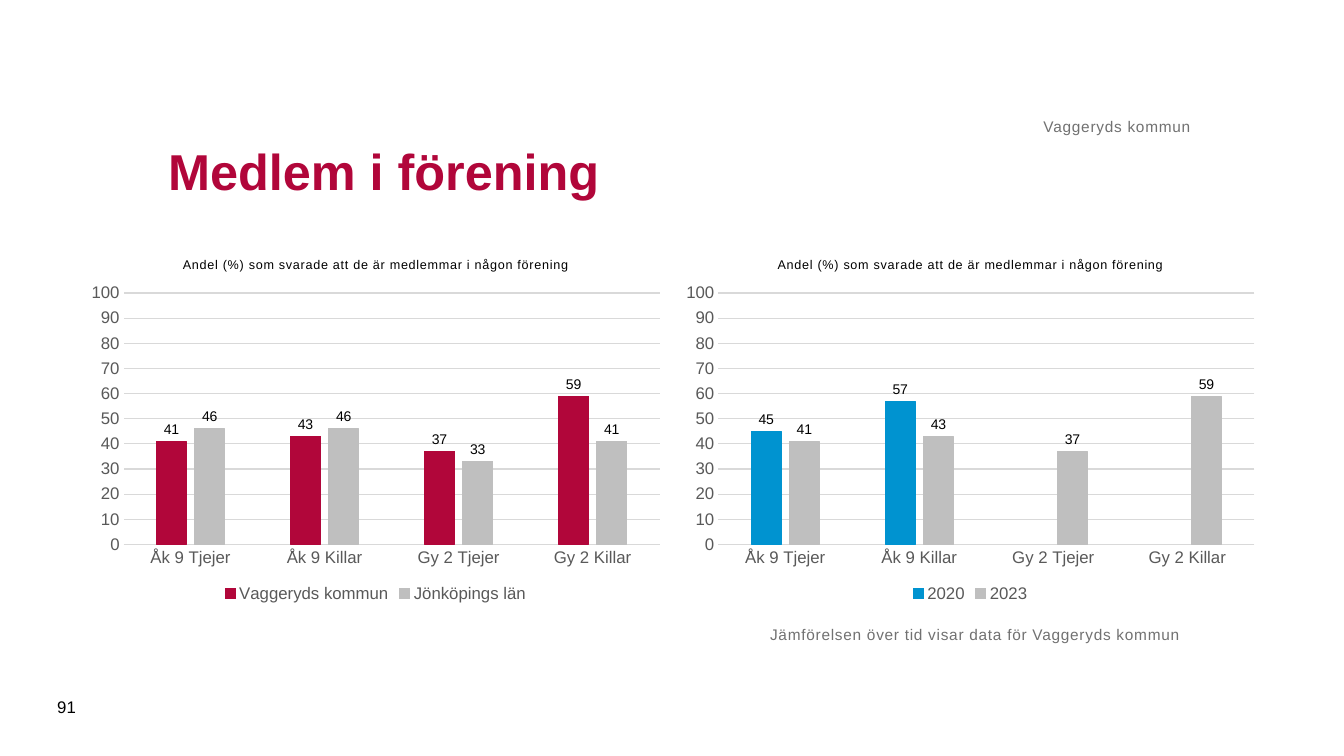
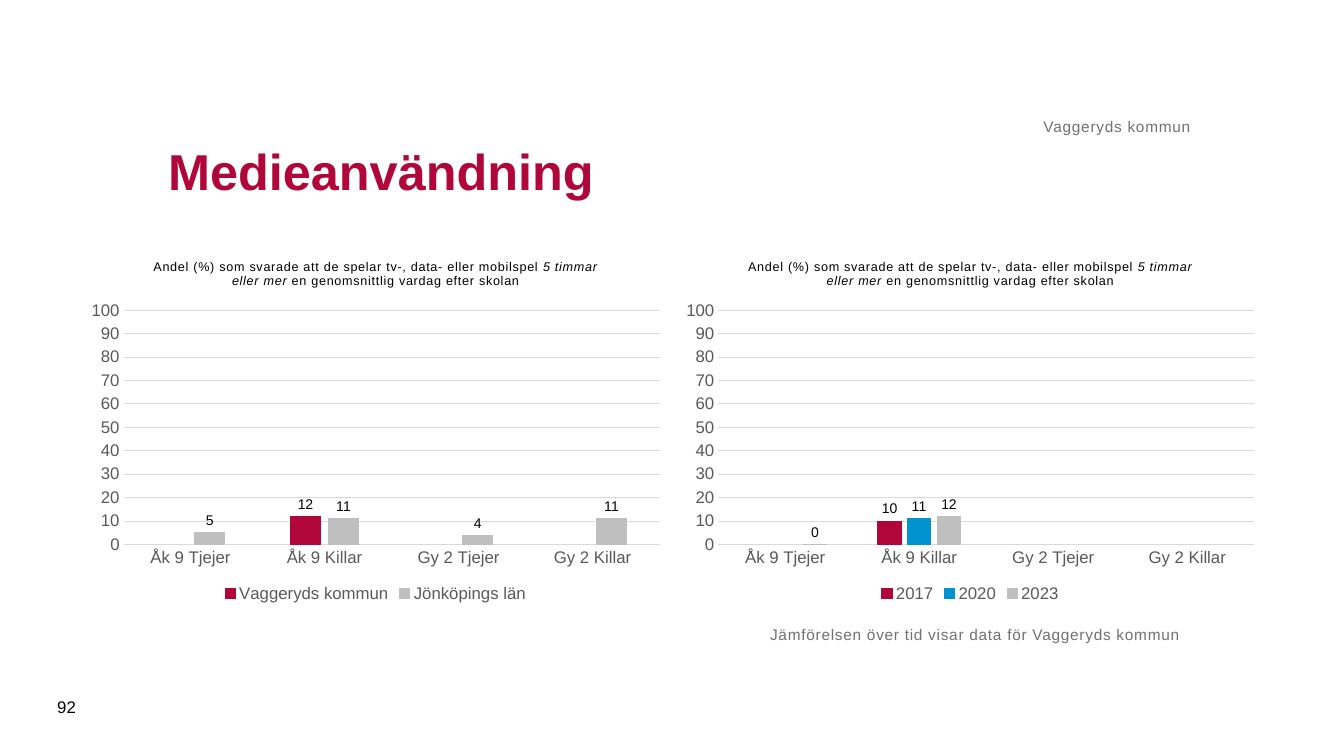
from pptx import Presentation
from pptx.chart.data import CategoryChartData
from pptx.dml.color import RGBColor
from pptx.enum.chart import XL_CHART_TYPE, XL_LABEL_POSITION, XL_LEGEND_POSITION, XL_TICK_MARK
from pptx.enum.text import MSO_ANCHOR, PP_ALIGN
from pptx.util import Inches, Pt

# Shared style
FONT = "Arial"
RED, BLUE, SILVER = "B1063A", "0093D0", "BFBFBF"
BLACK, AXIS_TEXT, NOTE_TEXT, GRID_LINE = "000000", "595959", "717171", "D9D9D9"
NUMBER_FORMAT = "#,##0;#,##0"
LETTER_SPACING = 0.5

# Places in percent of the slide: left, top, width, height
TITLE_PLACE = (11.78, 13.07, 76.8, 18.93)
MUNICIPALITY_PLACE = (11.78, 8.27, 76.8, 9.73)
NOTE_PLACE = (57.3, 82.67, 39.83, 12.53)
NUMBER_PLACE = (3.52, 90.8, 4.28, 5.33)
CHART_LEFT, CHART_STEP = 5.93, 44.25
CHART_TOP, CHART_WIDTH, CHART_HEIGHT = 32, 44.03, 48.27

# Shared wording
MUNICIPALITY = "Vaggeryds kommun"
COUNTY = "Jönköpings län"
NOTE = "Jämförelsen över tid visar data för Vaggeryds kommun"
CATEGORIES = ["Åk 9 Tjejer", "Åk 9 Killar", "Gy 2 Tjejer", "Gy 2 Killar"]


def color(hex_string):
    return RGBColor.from_string(hex_string)


class Report:
    """Holds the presentation, the current slide and the style."""

    def __init__(self):
        self.presentation = Presentation()
        self.presentation.slide_width = Inches(13.33)
        self.presentation.slide_height = Inches(7.5)
        self.slide = None

    def new_slide(self):
        self.slide = self.presentation.slides.add_slide(self.presentation.slide_layouts[6])

    def place(self, left, top, width, height):
        column = self.presentation.slide_width / 100
        row = self.presentation.slide_height / 100
        return (round(left * column), round(top * row),
                round(width * column), round(height * row))

    def style_font(self, font, size, hex_string):
        font.name = FONT
        font.size = Pt(size)
        font.color.rgb = color(hex_string)

    def add_run(self, paragraph, text, size, hex_string, bold=False, italic=False, spacing=0):
        run = paragraph.add_run()
        run.text = text
        self.style_font(run.font, size, hex_string)
        run.font.bold = bold
        run.font.italic = italic
        if spacing:
            run._r.get_or_add_rPr().set("spc", str(round(spacing * 100)))

    def text(self, place, text, size, hex_string, anchor=MSO_ANCHOR.MIDDLE,
             align=PP_ALIGN.LEFT, bold=False, spacing=0, inset=True):
        frame = self.slide.shapes.add_textbox(*self.place(*place)).text_frame
        frame.word_wrap = True
        frame.vertical_anchor = anchor
        if not inset:
            frame.margin_left = frame.margin_right = 0
            frame.margin_top = frame.margin_bottom = 0
        paragraph = frame.paragraphs[0]
        paragraph.alignment = align
        self.add_run(paragraph, text, size, hex_string, bold, spacing=spacing)

    def chart(self, position, title_runs, series_list):
        data = CategoryChartData(number_format=NUMBER_FORMAT)
        data.categories = CATEGORIES
        for name, _, values in series_list:
            data.add_series(name, values)
        place = self.place(CHART_LEFT + position * CHART_STEP, CHART_TOP,
                           CHART_WIDTH, CHART_HEIGHT)
        chart = self.slide.shapes.add_chart(
            XL_CHART_TYPE.COLUMN_CLUSTERED, *place, data).chart
        self.style_font(chart.font, 10, BLACK)

        # Title and legend
        chart.has_title = True
        paragraph = chart.chart_title.text_frame.paragraphs[0]
        for text, italic in title_runs:
            self.add_run(paragraph, text, 9, BLACK, italic=italic, spacing=LETTER_SPACING)
        chart.chart_title.include_in_layout = False
        chart.has_legend = True
        chart.legend.position = XL_LEGEND_POSITION.BOTTOM
        chart.legend.include_in_layout = False
        self.style_font(chart.legend.font, 12, AXIS_TEXT)

        # Axes
        for axis in (chart.category_axis, chart.value_axis):
            axis.major_tick_mark = axis.minor_tick_mark = XL_TICK_MARK.NONE
            self.style_font(axis.tick_labels.font, 12, AXIS_TEXT)
        values_axis = chart.value_axis
        values_axis.minimum_scale, values_axis.maximum_scale = 0, 100
        values_axis.major_unit = 10
        values_axis.tick_labels.number_format = NUMBER_FORMAT
        values_axis.tick_labels.number_format_is_linked = False
        values_axis.format.line.fill.background()
        for line in (chart.category_axis.format.line, values_axis.major_gridlines.format.line):
            line.color.rgb = color(GRID_LINE)
            line.width = Pt(0.75)

        # Columns and their labels
        plot = chart.plots[0]
        plot.gap_width, plot.overlap = 219, -27
        plot.vary_by_categories = False
        for series, (_, hex_string, _) in zip(plot.series, series_list):
            series.invert_if_negative = False
            series.format.fill.solid()
            series.format.fill.fore_color.rgb = color(hex_string)
            series.format.line.color.rgb = color(hex_string)
            series.format.line.width = Pt(0.75)
            labels = series.data_labels
            labels.show_value = True
            labels.position = XL_LABEL_POSITION.OUTSIDE_END
            labels.number_format = NUMBER_FORMAT
            labels.number_format_is_linked = False
            self.style_font(labels.font, 10, BLACK)

    def result_slide(self, number, title, question, by_area, by_year):
        self.new_slide()
        for position, series_list in enumerate((by_area, by_year)):
            self.chart(position, question, series_list)
        self.text(TITLE_PLACE, title, 36, RED, bold=True)
        self.text(NOTE_PLACE, NOTE, 11, NOTE_TEXT, anchor=MSO_ANCHOR.TOP,
                  spacing=LETTER_SPACING, inset=False)
        self.text(MUNICIPALITY_PLACE, MUNICIPALITY, 11, NOTE_TEXT, anchor=MSO_ANCHOR.BOTTOM,
                  align=PP_ALIGN.RIGHT, spacing=LETTER_SPACING, inset=False)
        self.text(NUMBER_PLACE, str(number), 12, BLACK)


def main():
    report = Report()

    # Membership in associations
    report.result_slide(
        91, "Medlem i förening",
        [("Andel (%) som svarade att de är medlemmar i någon förening", False)],
        [(MUNICIPALITY, RED, (41, 43, 37, 59)),
         (COUNTY, SILVER, (46, 46, 33, 41))],
        [("2020", BLUE, (45, 57, None, None)),
         ("2023", SILVER, (41, 43, 37, 59))])

    # Media use
    report.result_slide(
        92, "Medieanvändning",
        [("Andel (%) som svarade att de spelar tv-, data- eller mobilspel ", False),
         ("5 timmar eller mer", True),
         (" en genomsnittlig vardag efter skolan", False)],
        [(MUNICIPALITY, RED, (None, 12, None, None)),
         (COUNTY, SILVER, (5, 11, 4, 11))],
        [("2017", RED, (None, 10, None, None)),
         ("2020", BLUE, (None, 11, None, None)),
         ("2023", SILVER, (0, 12, None, None))])

    report.presentation.save("out.pptx")


if __name__ == "__main__":
    main()
